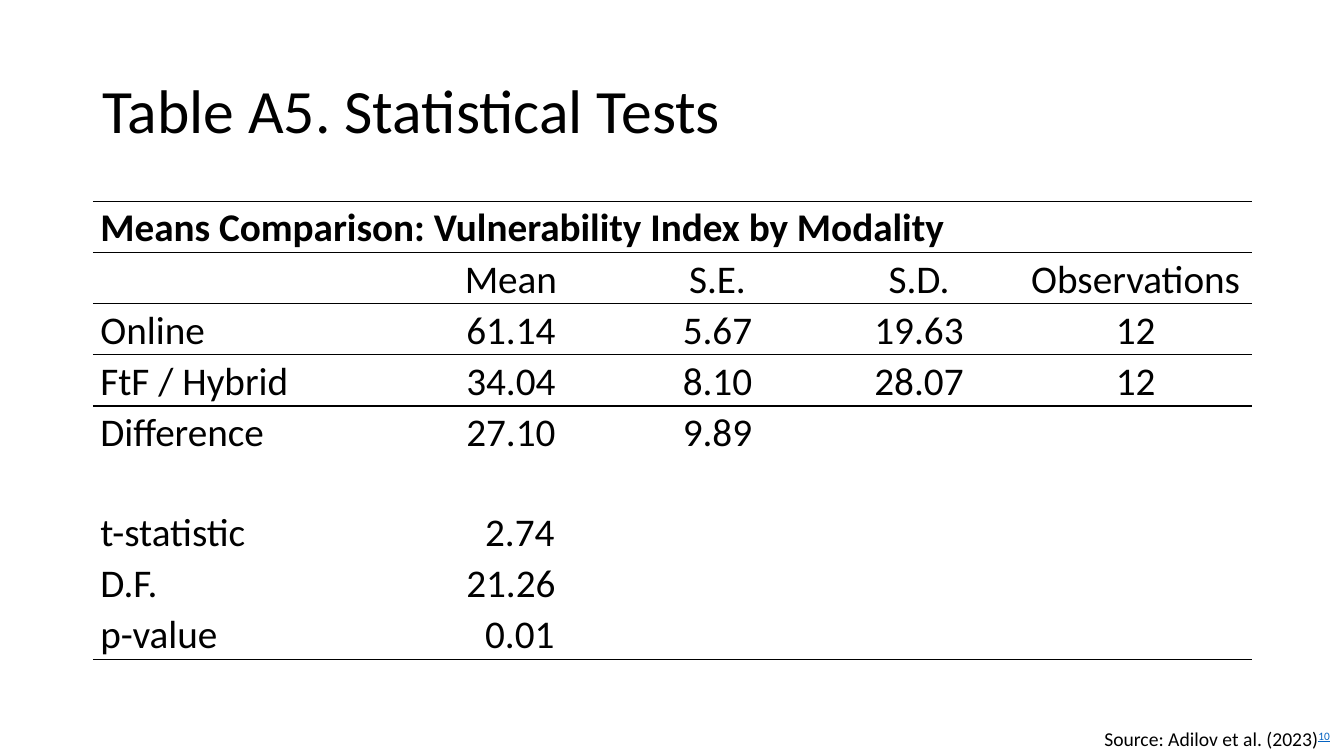
from lxml import etree
from pptx import Presentation
from pptx import util as u
from pptx.dml.color import RGBColor
from pptx.enum import text
from pptx.oxml.ns import qn

COLORS = {"ink": "000000", "link": "0563C1"}
NO_STYLE = "{2D5ABB26-0587-4C30-8999-92F81FD0307C}"

COL_WIDTHS = [7.87, 5.33, 5.08, 5.08, 5.84]
ROW_HEIGHT, GAP_HEIGHT = 1.29, 1.22
ROWS = [
    ["Means Comparison: Vulnerability Index by Modality"],
    ["", "Mean", "S.E.", "S.D.", "Observations"],
    ["Online", "61.14", "5.67", "19.63", "12"],
    ["FtF / Hybrid", "34.04", "8.10", "28.07", "12"],
    ["Difference", "27.10", "9.89"],
    [],
    ["t-statistic", "2.74"],
    ["D.F.", "21.26"],
    ["p-value", "0.01"],
]
RULED_TOP = {0, 1, 2, 3}
RULED_BOTTOM = {0, 1, 2, len(ROWS) - 1}


class StatSlide:
    font = "Calibri"

    def __init__(self, prs):
        self.slide = prs.slides.add_slide(prs.slide_layouts[6])

    def run(self, p, content, size, color="ink", **formats):
        r = p.add_run()
        r.text = content
        for name, value in {"name": self.font, "size": u.Pt(size), **formats}.items():
            setattr(r.font, name, value)
        r.font.color.rgb = RGBColor.from_string(COLORS[color])
        return r

    def text_box(self, left, top, width, height, **formats):
        """Add an empty text box and return its first paragraph."""
        box = self.slide.shapes.add_textbox(*map(u.Cm, (left, top, width, height)))
        for name, value in formats.items():
            setattr(box.text_frame, name, value)
        return box.text_frame.paragraphs[0]

    def rule(self, cell, side):
        """Draw a 1 pt line on one side of a cell: lnT or lnB."""
        tc_pr = cell._tc.get_or_add_tcPr()
        ln = etree.SubElement(tc_pr, qn("a:" + side), w=str(u.Pt(1)))
        fill = etree.SubElement(ln, qn("a:solidFill"))
        etree.SubElement(fill, qn("a:srgbClr"), val=COLORS["ink"])

    def cell(self, cell, content, **formats):
        p = cell.text_frame.paragraphs[0]
        margins = {"margin_left": u.Cm(0.19), "margin_right": u.Cm(0.19),
                   "margin_top": 0, "margin_bottom": 0}
        for name, value in {**margins, **formats}.items():
            setattr(cell, name, value)
        p.line_spacing = 1.07
        if content:
            self.run(p, content, 28)
        return p

    def table(self, left, top, rows):
        heights = [ROW_HEIGHT if row else GAP_HEIGHT for row in rows]
        frame = self.slide.shapes.add_table(
            len(rows), len(COL_WIDTHS), u.Cm(left), u.Cm(top),
            u.Cm(sum(COL_WIDTHS)), u.Cm(sum(heights)))
        table = frame.table
        table.first_row = table.horz_banding = False
        table._tbl.tblPr.find(qn("a:tableStyleId")).text = NO_STYLE
        for column, width in zip(table.columns, COL_WIDTHS):
            column.width = u.Cm(width)
        for i, (row, height) in enumerate(zip(rows, heights)):
            table.rows[i].height = u.Cm(height)
            for j in range(len(COL_WIDTHS)):
                cell = table.cell(i, j)
                formats = {"vertical_anchor": text.MSO_ANCHOR.MIDDLE if i == 1
                           else text.MSO_ANCHOR.BOTTOM}
                content = row[j] if j < len(row) else ""
                if j == 1 and len(content) == 4 and i > 5:
                    # Shift shorter numbers so that the decimals line up
                    formats["margin_left"] = u.Cm(0.64)
                p = self.cell(cell, content, **formats)
                if j:
                    p.alignment = text.PP_ALIGN.CENTER
                if i in RULED_TOP:
                    self.rule(cell, "lnT")
                if i in RULED_BOTTOM:
                    self.rule(cell, "lnB")
                cell.fill.background()
        table.cell(0, 0).merge(table.cell(0, len(COL_WIDTHS) - 1))
        table.cell(0, 0).text_frame.paragraphs[0].runs[0].font.bold = True


def main():
    prs = Presentation()
    prs.slide_width, prs.slide_height = u.Cm(33.87), u.Cm(19.05)
    s = StatSlide(prs)

    title = s.text_box(2.34, 1.02, 29.2, 3.68, word_wrap=True,
                       vertical_anchor=text.MSO_ANCHOR.MIDDLE)
    title.line_spacing = 0.9
    s.run(title, "Table A5. Statistical Tests", 44)

    s.table(2.34, 5.07, ROWS)

    source = s.text_box(27.58, 18.19, 6.3, 0.86, word_wrap=False,
                        auto_size=text.MSO_AUTO_SIZE.SHAPE_TO_FIT_TEXT)
    s.run(source, "Source: Adilov et al. (2023)", 14)
    note = s.run(source, "10", 14, "link", underline=True)
    note.font._element.set("baseline", "30000")

    prs.save("out.pptx")


if __name__ == "__main__":
    main()
